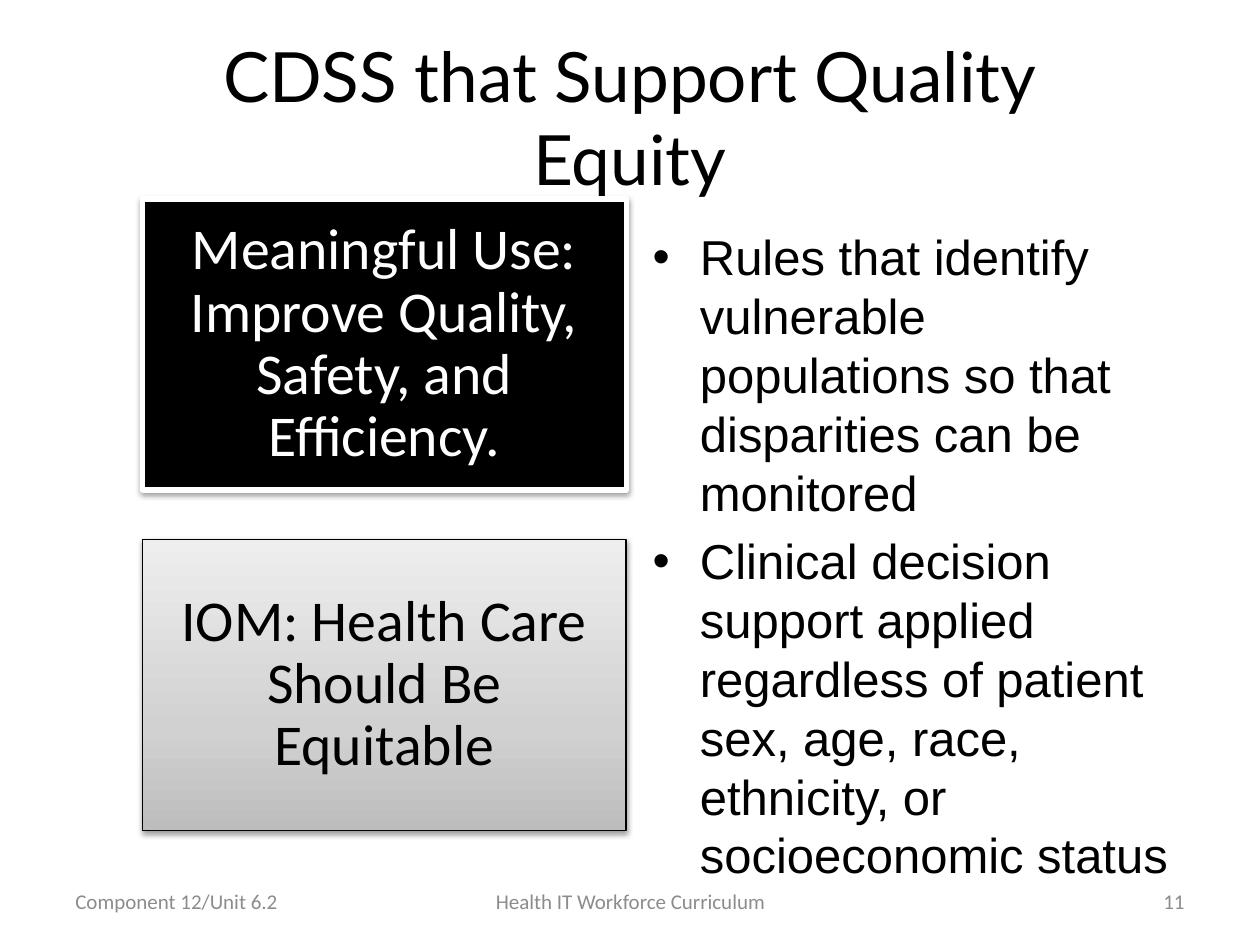
from copy import deepcopy

from pptx import Presentation
from pptx.dml.color import RGBColor
from pptx.enum.shapes import MSO_SHAPE
from pptx.enum.text import MSO_ANCHOR, MSO_AUTO_SIZE, PP_ALIGN
from pptx.oxml import parse_xml
from pptx.oxml.ns import nsdecls, qn
from pptx.util import Inches, Pt

RECT = MSO_SHAPE.RECTANGLE
MIDDLE = MSO_ANCHOR.MIDDLE
NO_FIT = MSO_AUTO_SIZE.NONE
LEFT, CENTER, RIGHT = PP_ALIGN.LEFT, PP_ALIGN.CENTER, PP_ALIGN.RIGHT

COLORS = {
    "black": "000000",
    "white": "FFFFFF",
    "footer": "8C8C8C",
    "gray_dark": "BDBDBD",
    "gray_mid": "D1D1D1",
    "gray_light": "EEEEEE",
}
GRADIENT = [(0, "gray_dark"), (0.35, "gray_mid"), (1, "gray_light")]
BULLETS = [
    "Rules that identify vulnerable populations so that disparities can be monitored",
    "Clinical decision support applied regardless of patient sex, age, race, "
    "ethnicity, or socioeconomic status",
]
FOOTERS = [
    ("Component 12/Unit 6.2", 0.5, 2.33, LEFT),
    ("Health IT Workforce Curriculum", 3.42, 3.17, CENTER),
    ("11", 7.17, 2.33, RIGHT),
]


def rgb(name):
    """Return the named colour."""
    return RGBColor.from_string(COLORS[name])


def format_text(tf, font, size, color, align):
    """Format every run and paragraph of a text frame."""
    tf.word_wrap = True
    tf.auto_size = NO_FIT
    for p in tf.paragraphs:
        p.alignment = align
        for r in p.runs:
            r.font.name = font
            r.font.size = Pt(size)
            r.font.color.rgb = rgb(color)


def place(sp, left, top, width, height):
    """Move and size a placeholder."""
    sp.left, sp.top = Inches(left), Inches(top)
    sp.width, sp.height = Inches(width), Inches(height)


def fill_title(sp, text):
    """Fill the title placeholder."""
    place(sp, 0.5, 0.3, 9, 1.25)
    sp.text_frame.text = text
    sp.text_frame.vertical_anchor = MIDDLE
    format_text(sp.text_frame, "Lato", 39.6, "black", CENTER)


def fill_bullets(sp, items):
    """Fill the body placeholder with one bullet per item."""
    place(sp, 5.08, 1.75, 4.42, 4.95)
    tf = sp.text_frame
    tf.text = "\n".join(items)
    format_text(tf, "Arial", 28, "black", LEFT)


def set_gradient(sp, stops):
    """Give a shape a vertical gradient running upwards."""
    sp.fill.gradient()
    sp.fill.gradient_angle = 90
    gs_list = sp._element.spPr.find(qn("a:gradFill")).find(qn("a:gsLst"))
    while len(gs_list) < len(stops):
        gs_list.append(deepcopy(gs_list[-1]))
    for stop, (position, color) in zip(sp.fill.gradient_stops, stops):
        stop.position = position
        stop.color.rgb = rgb(color)


def set_shadow(sp):
    """Give a shape a soft shadow below it."""
    sp.shadow.inherit = False
    sp._element.spPr.find(qn("a:effectLst")).append(parse_xml(
        f'<a:outerShdw {nsdecls("a")} blurRad="40000" dist="20000" dir="5400000" '
        f'rotWithShape="0"><a:srgbClr val="{COLORS["black"]}">'
        '<a:alpha val="38000"/></a:srgbClr></a:outerShdw>'))


def add_panel(slide, top, text, text_color, line_color, line_width):
    """Add a shadowed panel with centred text."""
    sp = slide.shapes.add_shape(
        RECT, Inches(1.13), Inches(top), Inches(3.84), Inches(2.31))
    sp.line.color.rgb = rgb(line_color)
    sp.line.width = Pt(line_width)
    set_shadow(sp)
    tf = sp.text_frame
    tf.text = text
    tf.vertical_anchor = MIDDLE
    tf.margin_left = tf.margin_right = Inches(0.14)
    tf.margin_top = tf.margin_bottom = Inches(0.14)
    tf.paragraphs[0].line_spacing = 0.9
    format_text(tf, "Calibri", 33, text_color, CENTER)
    return sp


def add_footer(slide, text, left, width, align):
    """Add one footer text."""
    tf = slide.shapes.add_textbox(
        Inches(left), Inches(6.95), Inches(width), Inches(0.4)).text_frame
    tf.text = text
    tf.vertical_anchor = MIDDLE
    format_text(tf, "Calibri", 12, "footer", align)


def main():
    """Build the slide and save it."""
    prs = Presentation()
    prs.slide_width, prs.slide_height = Inches(10), Inches(7.5)
    slide = prs.slides.add_slide(prs.slide_layouts[1])
    fill_title(slide.shapes.title, "CDSS that Support Quality\vEquity")
    fill_bullets(slide.placeholders[1], BULLETS)
    use = add_panel(
        slide, 1.58, "Meaningful Use: Improve Quality, Safety, and Efficiency.",
        "white", "white", 3)
    use.fill.solid()
    use.fill.fore_color.rgb = rgb("black")
    iom = add_panel(
        slide, 4.28, "IOM: Health Care Should Be Equitable", "black", "black", 0.75)
    set_gradient(iom, GRADIENT)
    for footer in FOOTERS:
        add_footer(slide, *footer)
    prs.save("out.pptx")


if __name__ == "__main__":
    main()
